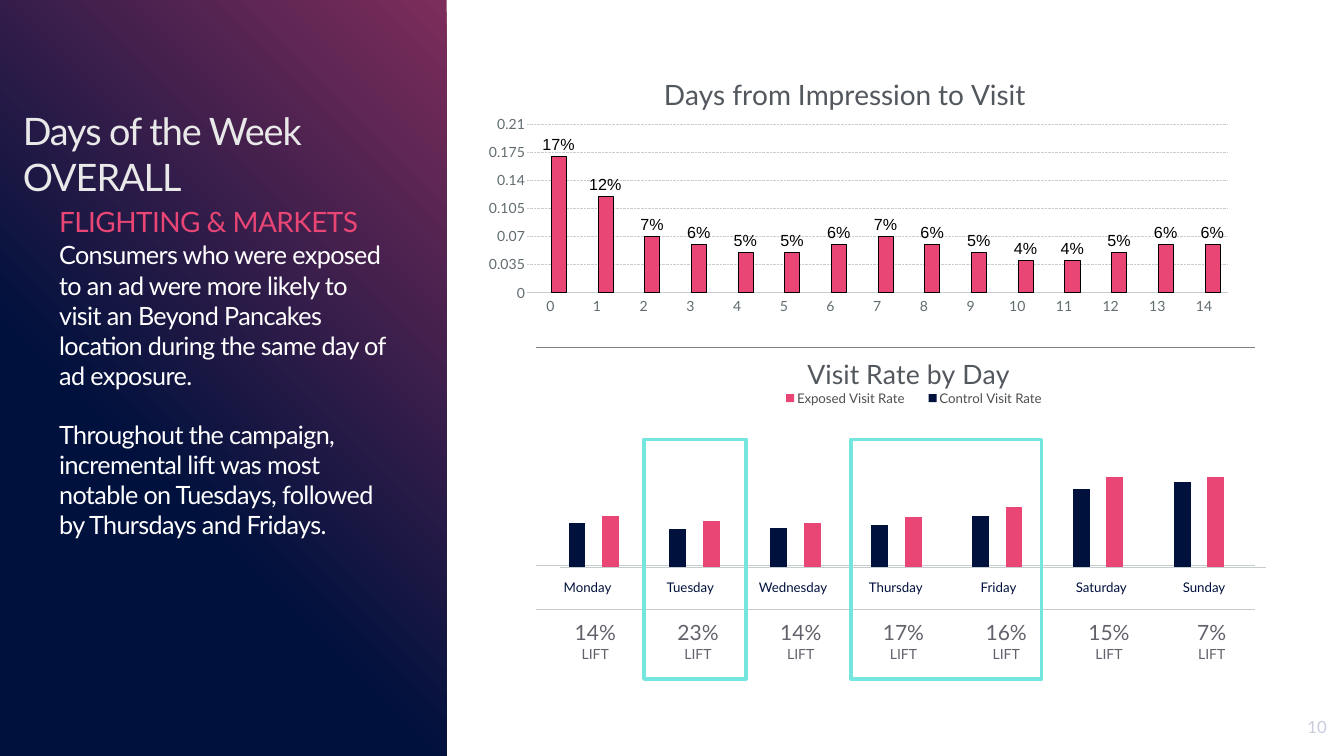
from lxml.etree import SubElement
from pptx import Presentation
from pptx.chart.data import CategoryChartData
from pptx.dml.color import RGBColor
from pptx.enum.chart import XL_CHART_TYPE as ChartType, XL_LABEL_POSITION as LabelPosition
from pptx.enum.chart import XL_LEGEND_POSITION as LegendPosition, XL_TICK_LABEL_POSITION as TickLabels
from pptx.enum.chart import XL_TICK_MARK as TickMark
from pptx.enum.dml import MSO_LINE as Dash
from pptx.enum.shapes import MSO_SHAPE as Shape
from pptx.enum.text import MSO_ANCHOR as Anchor, MSO_AUTO_SIZE as AutoSize, PP_ALIGN as Align
from pptx.oxml import parse_xml
from pptx.oxml.ns import nsdecls, qn
from pptx.util import Pt

NAVY = RGBColor(0x00, 0x11, 0x3D)
PLUM = RGBColor(0x7D, 0x2D, 0x5B)
PINK = RGBColor(0xE9, 0x45, 0x75)
INDIGO = RGBColor(0x3C, 0x47, 0x92)
AQUA = RGBColor(0x74, 0xE6, 0xDD)
WHITE = RGBColor(0xFF, 0xFF, 0xFF)
BLACK = RGBColor(0x00, 0x00, 0x00)
PALE = RGBColor(0xE9, 0xE9, 0xE9)
LILAC = RGBColor(0xC8, 0xCC, 0xDD)
RULE = RGBColor(0xC7, 0xCD, 0xCF)
GRAY = RGBColor(0x80, 0x80, 0x80)
AXIS = RGBColor(0x60, 0x6C, 0x70)
LIFT = RGBColor(0x62, 0x62, 0x6C)
HEADING = RGBColor(0x53, 0x58, 0x5F)
LEGEND = RGBColor(0x50, 0x50, 0x50)
NO_GRID_STYLE = "{2D5ABB26-0587-4C30-8999-92F81FD0307C}"

DAYS = ["Monday", "Tuesday", "Wednesday", "Thursday", "Friday", "Saturday", "Sunday"]
LIFTS = ["14%", "23%", "14%", "17%", "16%", "15%", "7%"]
CONTROL = [49, 42, 43, 47, 57, 87, 94]
EXPOSED = [56, 51, 49, 55, 66, 100, 100]
VISITS = [0.17, 0.12, 0.07, 0.06, 0.05, 0.05, 0.06, 0.07, 0.06, 0.05, 0.04, 0.04, 0.05, 0.06, 0.06]


class SlideBuilder:
    """Draws styled elements on the current slide."""

    def __init__(self, page, font="Lato", inset=4.5):
        self.page, self.font, self.inset = page, font, inset

    def style(self, font, size, color, name=None):
        font.name, font.size, font.bold = name or self.font, Pt(size), False
        font.color.rgb = color

    def span(self, para, text, size, color, spacing=0):
        span = para.add_run()
        span.text = text
        self.style(span.font, size, color)
        if spacing:
            span.font._element.set("spc", str(round(spacing * 100)))

    def frame(self, box, area, lines, size, color, spacing=0, gap=0, align=Align.LEFT, wrap=True):
        box.left, box.top, box.width, box.height = map(Pt, area)
        frame = box.text_frame
        frame.auto_size, frame.word_wrap = AutoSize.NONE, wrap
        frame.vertical_anchor = Anchor.TOP
        frame.margin_left = frame.margin_right = Pt(self.inset)
        frame.margin_top = frame.margin_bottom = Pt(self.inset)
        for index, line in enumerate(lines):
            para = frame.add_paragraph() if index else frame.paragraphs[0]
            properties = para._p.get_or_add_pPr()
            properties.set("marL", "0")
            properties.set("indent", "0")
            SubElement(properties, qn("a:buNone"))
            para.alignment = align
            para.space_before = Pt(gap if index else 0)
            self.span(para, line, size, color, spacing)

    def panel(self, *area):
        panel = self.page.shapes.add_shape(Shape.RECTANGLE, *map(Pt, area))
        panel.shadow.inherit = False
        panel.line.fill.background()
        panel.fill.gradient()
        panel.fill.gradient_angle = 225
        for stop, color, position in zip(panel.fill.gradient_stops, (PLUM, NAVY), (0, 0.64)):
            stop.color.rgb, stop.position = color, position
        self.page.shapes._spTree.insert(2, panel._element)

    def outline(self, *area):
        box = self.page.shapes.add_shape(Shape.RECTANGLE, *map(Pt, area))
        box.shadow.inherit = False
        box.fill.background()
        box.line.color.rgb, box.line.width = AQUA, Pt(5)

    def border(self, cell, side, color, width):
        line = parse_xml(
            f'<a:{side} {nsdecls("a")} w="{Pt(width)}"><a:solidFill>'
            f'<a:srgbClr val="{color}"/></a:solidFill></a:{side}>')
        properties = cell._tc.get_or_add_tcPr()
        properties.insert(len(properties.findall(qn("a:lnT"))), line)

    def table(self, left, top, column, heights):
        columns = len(DAYS)
        table = self.page.shapes.add_table(
            len(heights), columns, Pt(left), Pt(top), Pt(column * columns), Pt(sum(heights))).table
        table.first_row = table.horz_banding = False
        table._tbl.tblPr.find(qn("a:tableStyleId")).text = NO_GRID_STYLE
        for row, height in zip(table.rows, heights):
            row.height = Pt(height)
        for each in table.columns:
            each.width = Pt(column)
        for cell in table.iter_cells():
            cell.fill.background()
            cell.vertical_anchor = Anchor.MIDDLE
            cell.margin_left = cell.margin_right = Pt(self.inset)
            cell.margin_top = cell.margin_bottom = Pt(self.inset)
        return table

    def cell_lines(self, cell, lines):
        for index, (text, size, color) in enumerate(lines):
            para = cell.text_frame.add_paragraph() if index else cell.text_frame.paragraphs[0]
            para.alignment = Align.CENTER
            self.span(para, text, size, color)

    def place(self, element, index, inner=False, **numbers):
        for old in element.findall(qn("c:layout")):
            element.remove(old)
        target = '<c:layoutTarget val="inner"/>' if inner else ""
        modes = '<c:xMode val="edge"/><c:yMode val="edge"/>'
        values = "".join(f'<c:{key} val="{value}"/>' for key, value in numbers.items())
        element.insert(index, parse_xml(
            f'<c:layout {nsdecls("c")}><c:manualLayout>{target}{modes}{values}'
            "</c:manualLayout></c:layout>"))

    def chart(self, kind, area, title, title_size, title_at, plot_at, categories, series,
              gap, overlap, top, step, axis_size):
        data = CategoryChartData()
        data.categories = categories
        for name, values, _ in series:
            data.add_series(name, values)
        chart = self.page.shapes.add_chart(kind, *map(Pt, area), data).chart
        self.style(chart.font, 10, WHITE)
        chart.has_legend = False
        chart.has_title = True
        self.span(chart.chart_title.text_frame.paragraphs[0], title, title_size, HEADING)
        self.place(chart.chart_title._element, 1, **dict(zip("xy", title_at)))
        self.place(chart._chartSpace.chart.plotArea, 0, inner=True, **dict(zip("xywh", plot_at)))
        plot = chart.plots[0]
        plot.gap_width, plot.overlap, plot.vary_by_categories = gap, overlap, False
        for bars, (_, _, color) in zip(plot.series, series):
            bars.format.fill.solid()
            bars.format.fill.fore_color.rgb = color
            bars.invert_if_negative = False
        for axis in (chart.category_axis, chart.value_axis):
            axis.major_tick_mark = axis.minor_tick_mark = TickMark.NONE
            axis.has_major_gridlines = False
            self.style(axis.tick_labels.font, axis_size, AXIS)
        chart.category_axis.format.line.color.rgb = RULE
        chart.category_axis.format.line.width = Pt(1)
        scale = chart.value_axis
        scale.format.line.fill.background()
        scale.minimum_scale, scale.maximum_scale, scale.major_unit = 0, top, step
        return chart

    def visit_rate_chart(self):
        control = [value for rate in CONTROL for value in (rate, None, None)]
        exposed = [value for rate in EXPOSED for value in (None, rate, None)]
        chart = self.chart(
            ChartType.COLUMN_STACKED, (787, 500, 1027, 313), "Visit Rate by Day", 38, (0.35, 0),
            (0.013, 0, 0.982, 0.99), [str(n + 1) for n in range(len(control))],
            [("Control Visit Rate", control, NAVY), ("Exposed Visit Rate", exposed, PINK)],
            100, 100, 241, 48, 14)
        for axis in (chart.category_axis, chart.value_axis):
            axis.tick_label_position = TickLabels.NONE
        chart.has_legend = True
        chart.legend.position = LegendPosition.RIGHT
        chart.legend.include_in_layout = False
        self.style(chart.legend.font, 19, LEGEND)
        self.place(chart.legend._element, 1, x=0.3, y=0.18, w=0.41, h=0.08)

    def impression_chart(self):
        chart = self.chart(
            ChartType.COLUMN_CLUSTERED, (683, 99, 1076, 358), "Days from Impression to Visit", 40,
            (0.24, 0), (0.065, 0.219, 0.93, 0.672), [str(n) for n in range(len(VISITS))],
            [("Series 1", [None] * len(VISITS), INDIGO), ("Series 2", VISITS, PINK)],
            100, -10, 0.21, 0.035, 20)
        chart.category_axis.tick_label_position = TickLabels.LOW
        scale = chart.value_axis
        scale.has_major_gridlines = True
        grid = scale.major_gridlines.format.line
        grid.color.rgb, grid.width, grid.dash_style = RULE, Pt(1), Dash.ROUND_DOT
        bars = chart.plots[0].series[1]
        bars.format.line.color.rgb, bars.format.line.width = BLACK, Pt(1)
        labels = bars.data_labels
        labels.show_value, labels.position = True, LabelPosition.OUTSIDE_END
        labels.number_format, labels.number_format_is_linked = "#,##0%", False
        self.style(labels.font, 23, BLACK, "Arial")


def main():
    deck = Presentation()
    deck.slide_width, deck.slide_height = Pt(1920), Pt(1080)
    page = deck.slides.add_slide(deck.slide_layouts[3])
    build = SlideBuilder(page)
    title, subtitle, body = page.placeholders
    build.panel(0, 0, 638, 1080)
    build.frame(title, (28, 150, 610, 130), ["Days of the Week OVERALL"], 54, PALE, -1.5)
    build.frame(subtitle, (80, 287, 558, 38), ["FLIGHTING & MARKETS"], 40, PINK, -0.8)
    build.frame(body, (80, 338, 480, 421), [
        "Consumers who were exposed to an ad were more likely to visit an Beyond Pancakes "
        "location during the same day of ad exposure.",
        "Throughout the campaign, incremental lift was most notable on Tuesdays, "
        "followed by Thursdays and Fridays."], 36, WHITE, -0.9, gap=40)
    number = page.shapes.add_textbox(0, 0, 0, 0)
    build.frame(number, (1867, 1020, 29, 37), ["10"], 24, LILAC, align=Align.CENTER, wrap=False)

    days = build.table(766, 496, 146.8, [312, 62])
    lifts = build.table(777, 881, 146.8, [70])
    for column, (day, lift) in enumerate(zip(DAYS, LIFTS)):
        build.border(days.cell(0, column), "lnT", GRAY, 1)
        build.border(days.cell(0, column), "lnB", RULE, 2)
        build.border(days.cell(1, column), "lnT", RULE, 2)
        build.border(days.cell(1, column), "lnB", RULE, 1)
        build.cell_lines(days.cell(1, column), [(day, 19, NAVY)])
        build.cell_lines(lifts.cell(0, column), [(lift, 30, LIFT), ("LIFT", 20, LIFT)])

    build.visit_rate_chart()
    for left, width in ((920, 146), (1216, 272)):
        build.outline(left, 628, width, 342)
    build.impression_chart()
    deck.save("out.pptx")


if __name__ == "__main__":
    main()
